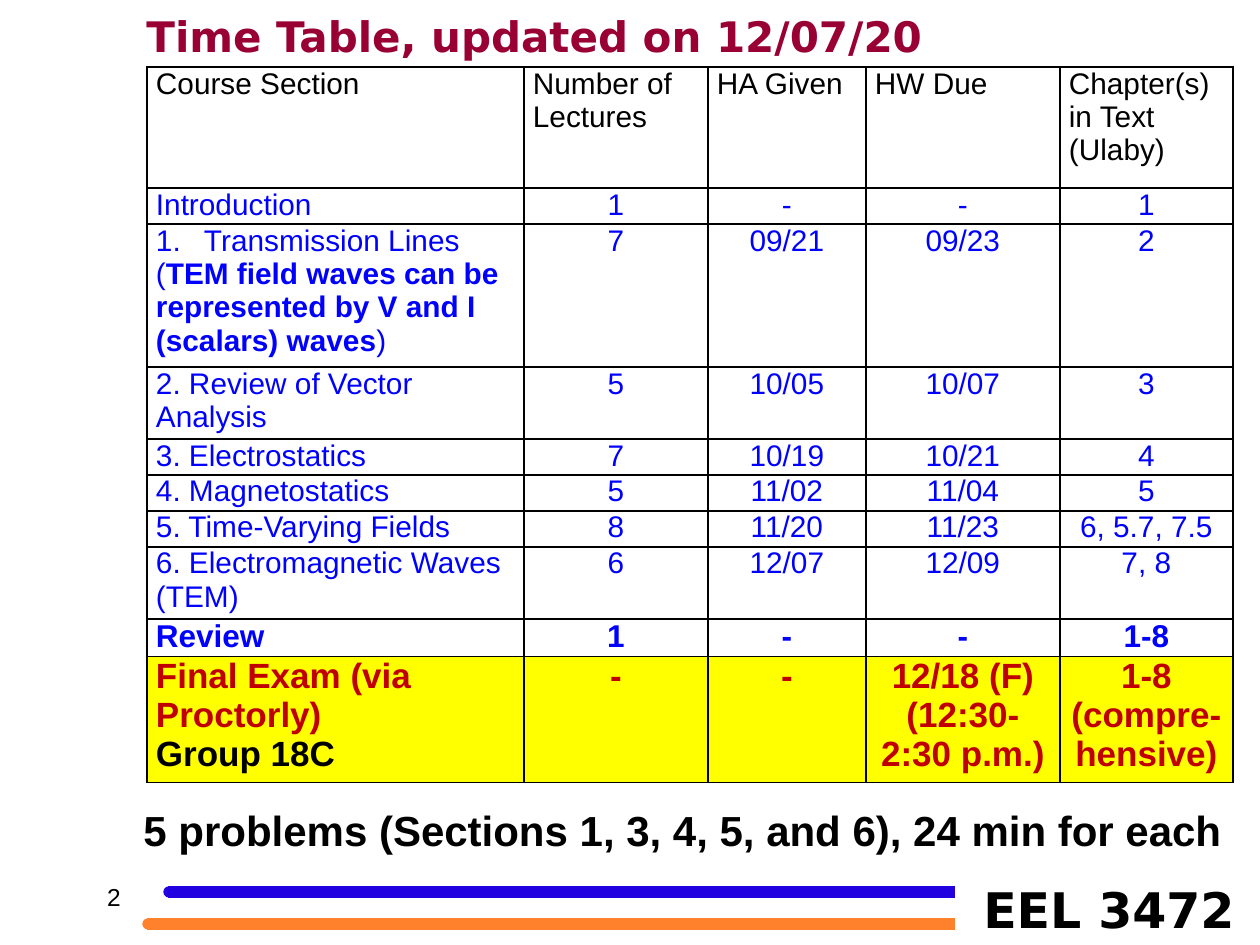
"""Build the course time table slide."""
from lxml.etree import SubElement
from pptx import Presentation
from pptx.dml.color import RGBColor
from pptx.enum.shapes import MSO_CONNECTOR, MSO_SHAPE
from pptx.enum.text import PP_ALIGN
from pptx.oxml.ns import qn
from pptx.util import Pt

PX = 914400 // 126
COLORS = {
    "black": "000000",
    "blue": "0000FF",
    "title": "990033",
    "exam": "C00000",
    "highlight": "FFFF00",
    "upper rule": "2101DF",
    "lower rule": "FF812B",
}
COLUMN_WIDTHS = [377, 184, 158, 194, 173]
HEADER = {"size": 17}
TOPIC = {"size": 17, "color": "blue"}
REVIEW = {"size": 18, "color": "blue", "bold": True}
EXAM = {"size": 20, "color": "exam", "bold": True}
SCHEDULE = [
    (121, HEADER, ["Course Section", "Number of Lectures", "HA Given", "HW Due",
                   "Chapter(s) in Text (Ulaby)"]),
    (36, TOPIC, ["Introduction", "1", "-", "-", "1"]),
    (143, TOPIC, ["Transmission Lines", "7", "09/21", "09/23", "2"]),
    (72, TOPIC, ["2. Review of Vector Analysis", "5", "10/05", "10/07", "3"]),
    (36, TOPIC, ["3. Electrostatics", "7", "10/19", "10/21", "4"]),
    (36, TOPIC, ["4. Magnetostatics", "5", "11/02", "11/04", "5"]),
    (36, TOPIC, ["5. Time-Varying Fields", "8", "11/20", "11/23", "6, 5.7, 7.5"]),
    (72, TOPIC, ["6. Electromagnetic Waves (TEM)", "6", "12/07", "12/09", "7, 8"]),
    (37, REVIEW, ["Review", "1", "-", "-", "1-8"]),
    (126, EXAM, ["Final Exam (via Proctorly)", "-", "-",
                 "12/18 (F)\n(12:30-2:30 p.m.)", "1-8 (compre-hensive)"]),
]
TRANSMISSION_ROW = 2
EXAM_ROW = 9


def px(length):
    return length * PX


def rgb(name):
    return RGBColor.from_string(COLORS[name])


def write(paragraph, text, size=17, color="black", bold=False, font="Arial",
          align=PP_ALIGN.LEFT):
    paragraph.alignment = align
    run = paragraph.add_run()
    run.text = text
    run.font.size = Pt(size)
    run.font.name = font
    run.font.bold = bold
    run.font.color.rgb = rgb(color)


def add_label(slide, text, left, top, width, height, **style):
    frame = slide.shapes.add_textbox(px(left), px(top), px(width), px(height)).text_frame
    frame.word_wrap = True
    write(frame.paragraphs[0], text, **style)


def add_rule(slide, color, left, right, middle):
    rule = slide.shapes.add_connector(
        MSO_CONNECTOR.STRAIGHT, px(left), px(middle), px(right), px(middle))
    rule.line.color.rgb = rgb(color)
    rule.line.width = Pt(6.75)
    SubElement(rule._element.spPr, qn("a:effectLst"))
    cap = slide.shapes.add_shape(
        MSO_SHAPE.OVAL, px(left - 4), px(middle - 5), px(10), px(10))
    cap.shadow.inherit = False
    cap.fill.solid()
    cap.fill.fore_color.rgb = rgb(color)
    cap.line.color.rgb = rgb(color)
    cap.line.width = Pt(0.75)


def add_borders(cell):
    properties = cell._tc.get_or_add_tcPr()
    for side in ("lnL", "lnR", "lnT", "lnB"):
        border = SubElement(properties, qn(f"a:{side}"), w=str(Pt(1)))
        paint = SubElement(border, qn("a:solidFill"))
        SubElement(paint, qn("a:srgbClr"), val=COLORS["black"])


def add_number(paragraph, indent):
    properties = paragraph._p.get_or_add_pPr()
    properties.set("marL", str(px(indent)))
    properties.set("indent", str(-px(indent)))
    SubElement(properties, qn("a:buFont"), typeface="+mj-lt")
    SubElement(properties, qn("a:buAutoNum"), type="arabicPeriod")


def fill_cell(cell, text, highlighted, **style):
    cell.margin_left = cell.margin_right = px(9)
    cell.margin_top = cell.margin_bottom = 0
    add_borders(cell)
    if highlighted:
        cell.fill.solid()
        cell.fill.fore_color.rgb = rgb("highlight")
    else:
        cell.fill.background()
    for index, line in enumerate(text.split("\n")):
        frame = cell.text_frame
        write(frame.add_paragraph() if index else frame.paragraphs[0], line, **style)


def add_schedule(slide, left, top):
    heights = [height for height, _, _ in SCHEDULE]
    schedule = slide.shapes.add_table(
        len(SCHEDULE), len(COLUMN_WIDTHS), px(left), px(top),
        px(sum(COLUMN_WIDTHS)), px(sum(heights))).table
    schedule.first_row = schedule.horz_banding = False
    for column, width in zip(schedule.columns, COLUMN_WIDTHS):
        column.width = px(width)
    for row, (height, style, entries) in enumerate(SCHEDULE):
        schedule.rows[row].height = px(height)
        for column, entry in enumerate(entries):
            centred = row > 0 and column > 0
            fill_cell(schedule.cell(row, column), entry, row == EXAM_ROW, **style,
                      align=PP_ALIGN.CENTER if centred else PP_ALIGN.LEFT)
    return schedule


def add_section_details(schedule):
    transmission = schedule.cell(TRANSMISSION_ROW, 0).text_frame
    add_number(transmission.paragraphs[0], 48)
    explanation = transmission.add_paragraph()
    write(explanation, "(", **TOPIC)
    write(explanation, "TEM field waves can be represented by V and I (scalars) waves",
          **TOPIC, bold=True)
    write(explanation, ")", **TOPIC)
    group = schedule.cell(EXAM_ROW, 0).text_frame.add_paragraph()
    write(group, "Group 18C", size=20, bold=True)


def main():
    deck = Presentation()
    deck.slide_width, deck.slide_height = px(1260), px(945)
    slide = deck.slides.add_slide(deck.slide_layouts[6])
    add_rule(slide, "upper rule", 168, 955, 892)
    add_rule(slide, "lower rule", 147, 955, 924)
    add_label(slide, "EEL 3472", 958, 873, 302, 72, size=28, bold=True,
              font="DejaVu Sans", align=PP_ALIGN.CENTER)
    add_label(slide, "2", 78, 876, 55, 53, size=14, align=PP_ALIGN.RIGHT)
    add_section_details(add_schedule(slide, 147, 67))
    add_label(slide, "Time Table, updated on 12/07/20", 134, 4, 878, 63, size=24,
              color="title", bold=True, font="DejaVu Sans")
    add_label(slide, "5 problems (Sections 1, 3, 4, 5, and 6), 24 min for each",
              131, 798, 1129, 63, size=24, bold=True)
    deck.save("out.pptx")


if __name__ == "__main__":
    main()
